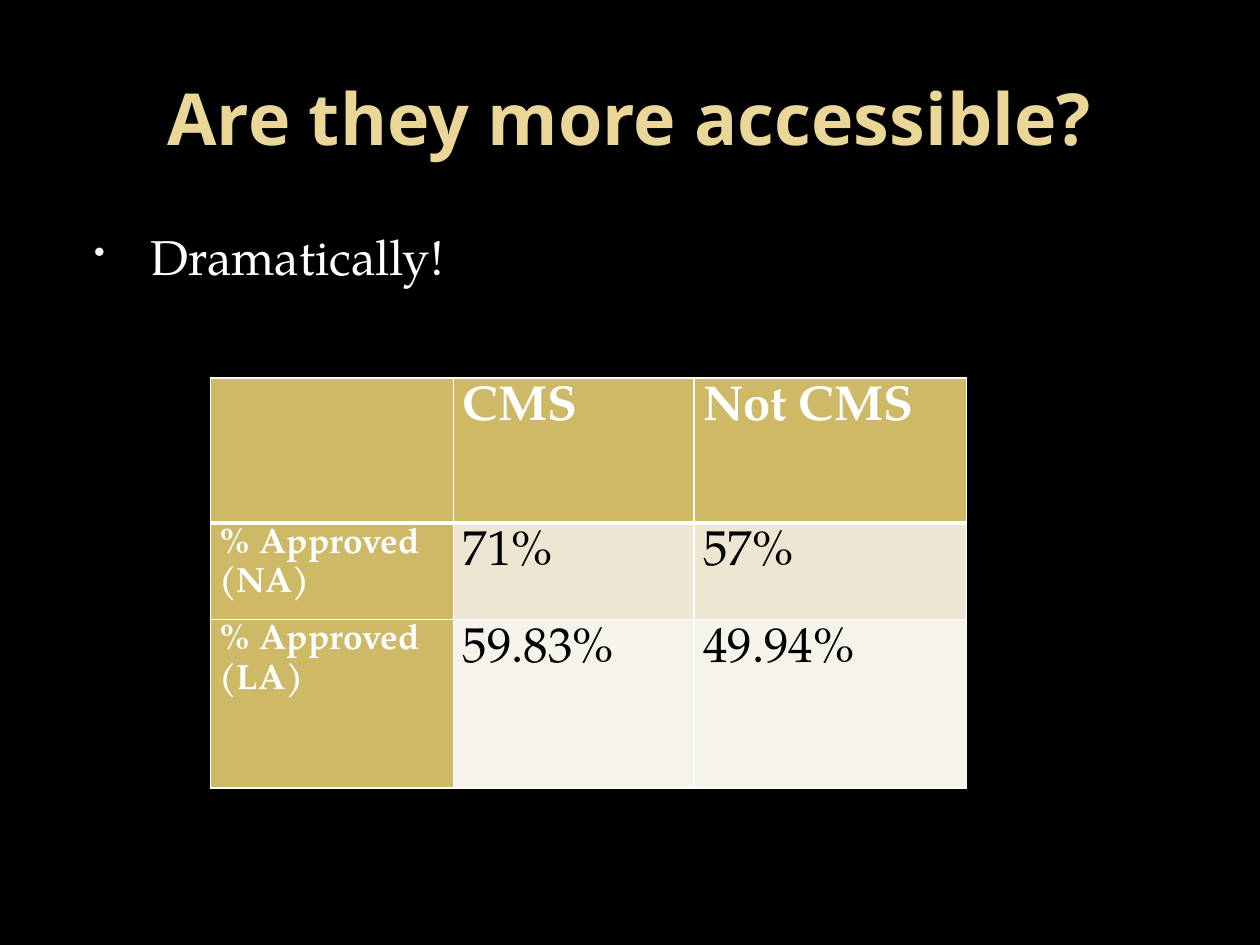
"""Builds the slide comparing the accessibility of CMS and non-CMS sites."""
from lxml import etree
from pptx import Presentation
from pptx.dml.color import RGBColor
from pptx.enum.text import MSO_ANCHOR, PP_ALIGN
from pptx.oxml.ns import qn
from pptx.util import Cm, Pt

CENTER, LEFT = PP_ALIGN.CENTER, PP_ALIGN.LEFT
MIDDLE, TOP = MSO_ANCHOR.MIDDLE, MSO_ANCHOR.TOP
BLACK = RGBColor(0x00, 0x00, 0x00)
WHITE = RGBColor(0xFF, 0xFF, 0xFF)
BULLET_WHITE = RGBColor(0xF9, 0xF9, 0xF9)
PALE_GOLD = RGBColor(0xEA, 0xD6, 0x96)
GOLD = RGBColor(0xCE, 0xB9, 0x66)
BANDS = (RGBColor(0xED, 0xE6, 0xD3), RGBColor(0xF6, 0xF3, 0xEA))
HEADING_FONT, BODY_FONT = "Open Sans", "TeX Gyre Pagella"

APPROVAL = (
    ("", "CMS", "Not CMS"),
    ("% Approved (NA)", "71%", "57%"),
    ("% Approved (LA)", "59.83%", "49.94%"),
)
COLUMN_WIDTHS = (4.9, 4.85, 5.49)
ROW_HEIGHTS = (2.92, 1.09, 3.4)


def write(frame, text, size=28, font=BODY_FONT, color=WHITE, bold=False,
          align=LEFT, anchor=TOP, before=0, after=0, spacing=1.0):
    """Write one formatted paragraph into a text frame and return it."""
    frame.word_wrap = True
    frame.vertical_anchor = anchor
    paragraph = frame.paragraphs[0]
    paragraph.alignment = align
    paragraph.space_before, paragraph.space_after = Pt(before), Pt(after)
    paragraph.line_spacing = spacing
    run = paragraph.add_run()
    run.text = text
    run.font.size, run.font.name, run.font.bold = Pt(size), font, bold
    run.font.color.rgb = color
    return paragraph


def add_text(slide, left, top, width, height, text, **style):
    """Add a text box and return its paragraph."""
    box = slide.shapes.add_textbox(Cm(left), Cm(top), Cm(width), Cm(height))
    return write(box.text_frame, text, **style)


def add_bullet(paragraph, indent, hanging):
    """Give a paragraph a small round bullet with a hanging indent."""
    properties = paragraph._p.get_or_add_pPr()
    properties.set("marL", str(Cm(indent)))
    properties.set("indent", str(-Cm(hanging)))
    color = etree.SubElement(properties, qn("a:buClr"))
    etree.SubElement(color, qn("a:srgbClr"), val=str(BULLET_WHITE))
    etree.SubElement(properties, qn("a:buSzPct"), val="65000")
    etree.SubElement(properties, qn("a:buChar"), char="•")


def add_borders(cell, **widths):
    """Draw white cell borders with widths in points, keyed by side."""
    properties = cell._tc.get_or_add_tcPr()
    for position, side in enumerate("LRTB"):
        line = etree.Element(qn(f"a:ln{side}"), w=str(Pt(widths.get(side, 1))))
        fill = etree.SubElement(line, qn("a:solidFill"))
        etree.SubElement(fill, qn("a:srgbClr"), val=str(WHITE))
        properties.insert(position, line)


def fill_cell(cell, text, row, column):
    """Format one cell as a header, a row label or a value."""
    is_value = row > 0 and column > 0
    is_label = row > 0 and column == 0
    cell.fill.solid()
    cell.fill.fore_color.rgb = BANDS[row - 1] if is_value else GOLD
    add_borders(cell, T=3 if row == 1 else 1, B=3 if row == 0 else 1)
    if text:
        cell.margin_left = cell.margin_right = Cm(0.19)
        cell.margin_top = cell.margin_bottom = 0
        write(cell.text_frame, text, size=20 if is_label else 28,
              color=BLACK if is_value else WHITE, bold=not is_value,
              after=10, spacing=1.15)


def add_approval_table(slide, left, top):
    """Add the table of approval rates."""
    table = slide.shapes.add_table(
        len(ROW_HEIGHTS), len(COLUMN_WIDTHS), Cm(left), Cm(top),
        Cm(sum(COLUMN_WIDTHS)), Cm(sum(ROW_HEIGHTS))).table
    for column, width in zip(table.columns, COLUMN_WIDTHS):
        column.width = Cm(width)
    for row, height in zip(table.rows, ROW_HEIGHTS):
        row.height = Cm(height)
    for row, texts in enumerate(APPROVAL):
        for column, text in enumerate(texts):
            fill_cell(table.cell(row, column), text, row, column)


def main():
    """Build and save the presentation."""
    presentation = Presentation()
    presentation.slide_width, presentation.slide_height = Cm(25.4), Cm(19.05)
    slide = presentation.slides.add_slide(presentation.slide_layouts[6])
    slide.background.fill.solid()
    slide.background.fill.fore_color.rgb = BLACK

    add_text(slide, 1.27, 0.76, 22.86, 3.18, "Are they more accessible?",
             size=41, font=HEADING_FONT, color=PALE_GOLD, bold=True,
             align=CENTER, anchor=MIDDLE)
    answer = add_text(slide, 1.27, 4.45, 22.86, 13.08, "Dramatically!",
                      before=5.6)
    add_bullet(answer, indent=1.52, hanging=1.14)
    add_approval_table(slide, 4.24, 7.62)
    presentation.save("out.pptx")


if __name__ == "__main__":
    main()
